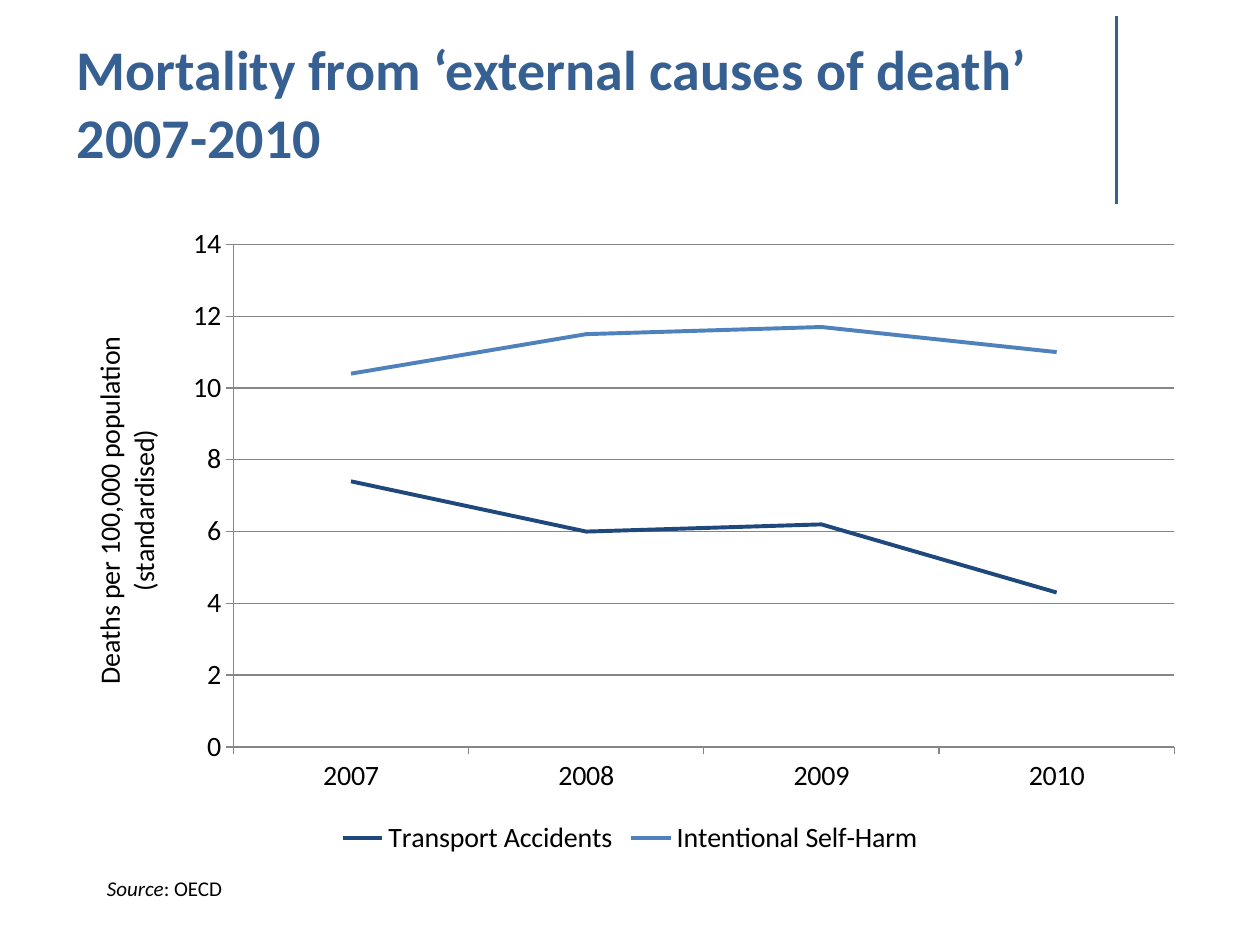
"""Build a slide with a line chart of deaths from external causes, 2007-2010."""
from dataclasses import dataclass

from lxml.etree import SubElement
from pptx import Presentation
from pptx.chart.data import CategoryChartData
from pptx.dml.color import RGBColor
from pptx.enum.chart import XL_CHART_TYPE, XL_LEGEND_POSITION, XL_TICK_MARK
from pptx.enum.text import MSO_ANCHOR, MSO_AUTO_SIZE, PP_ALIGN
from pptx.oxml.ns import qn
from pptx.util import Inches, Pt

TITLE = ["Mortality from ‘external causes of death’", "2007-2010"]
YEARS = ["2007", "2008", "2009", "2010"]
SERIES = [
    ("Transport Accidents", "1F497D", (7.4, 6, 6.2, 4.3)),
    ("Intentional Self-Harm", "4F81BD", (10.4, 11.5, 11.7, 11)),
]
AXIS = "Deaths per 100,000 population (standardised)"
SOURCE = [("Source", True), (": OECD", False)]

WIDE, HIGH = 10, 7.5
SPOTS = {
    "title": (0.051, 0.059, 0.825, 0.127),
    "chart": (0.05, 0.227, 0.9, 0.684),
    "source": (0.075, 0.92, 0.113, 0.04),
    "rule": (0.886, 0.017, 0, 0.199),
}


@dataclass(frozen=True)
class Theme:
    font: str = "Calibri"
    head: str = "376092"
    ink: str = "000000"
    grid: str = "868686"
    big: int = 32
    mid: int = 16
    small: int = 12


LOOK = Theme()


def place(name):
    return [Inches(share * side) for share, side in zip(SPOTS[name], (WIDE, HIGH) * 2)]


def style(font, size, tint, bold=False, italic=False):
    font.name, font.size = LOOK.font, Pt(size)
    font.bold, font.italic = bold, italic
    font.color.rgb = RGBColor.from_string(tint)


def stroke(line, tint, width):
    line.color.rgb = RGBColor.from_string(tint)
    line.width = Pt(width)


def add_title(slide):
    box = slide.shapes.title
    box.left, box.top, box.width, box.height = place("title")
    frame = box.text_frame
    frame.word_wrap = True
    frame.auto_size = MSO_AUTO_SIZE.NONE
    frame.vertical_anchor = MSO_ANCHOR.BOTTOM
    para = frame.paragraphs[0]
    para.alignment = PP_ALIGN.LEFT
    for i, words in enumerate(TITLE):
        if i:
            para.add_line_break()
        run = para.add_run()
        run.text = words
        style(run.font, LOOK.big, LOOK.head, bold=True)


def add_rule(slide):
    left, top, wide, high = place("rule")
    rule = slide.shapes.add_connector(1, left, top, left + wide, top + high)
    stroke(rule.line, LOOK.head, 1.5)
    SubElement(rule.element.spPr, qn("a:effectLst"))


def add_lines(slide):
    data = CategoryChartData()
    data.categories = YEARS
    for name, _, vals in SERIES:
        data.add_series(name, vals)
    chart = slide.shapes.add_chart(XL_CHART_TYPE.LINE, *place("chart"), data).chart
    style(chart.font, LOOK.mid, LOOK.ink)
    chart.has_title = False
    chart.has_legend = True
    chart.legend.position = XL_LEGEND_POSITION.BOTTOM
    chart.legend.include_in_layout = False
    plot = chart.plots[0]
    plot.vary_by_categories = False
    for line, (_, tint, _) in zip(plot.series, SERIES):
        line.smooth = False
        stroke(line.format.line, tint, 2.25)
    for axis in (chart.category_axis, chart.value_axis):
        axis.major_tick_mark = XL_TICK_MARK.OUTSIDE
        axis.minor_tick_mark = XL_TICK_MARK.NONE
        stroke(axis.format.line, LOOK.grid, 0.75)
    scale = chart.value_axis
    scale.minimum_scale, scale.maximum_scale, scale.major_unit = 0, 14, 2
    scale.has_major_gridlines = True
    stroke(scale.major_gridlines.format.line, LOOK.grid, 0.75)
    run = scale.axis_title.text_frame.paragraphs[0].add_run()
    run.text = AXIS
    style(run.font, LOOK.mid, LOOK.ink)


def add_source(slide):
    frame = slide.shapes.add_textbox(*place("source")).text_frame
    frame.word_wrap = False
    frame.auto_size = MSO_AUTO_SIZE.SHAPE_TO_FIT_TEXT
    for words, slant in SOURCE:
        run = frame.paragraphs[0].add_run()
        run.text = words
        style(run.font, LOOK.small, LOOK.ink, italic=slant)


def main():
    deck = Presentation()
    deck.slide_width, deck.slide_height = Inches(WIDE), Inches(HIGH)
    slide = deck.slides.add_slide(deck.slide_layouts[5])
    for build in (add_rule, add_title, add_lines, add_source):
        build(slide)
    deck.save("out.pptx")


if __name__ == "__main__":
    main()
